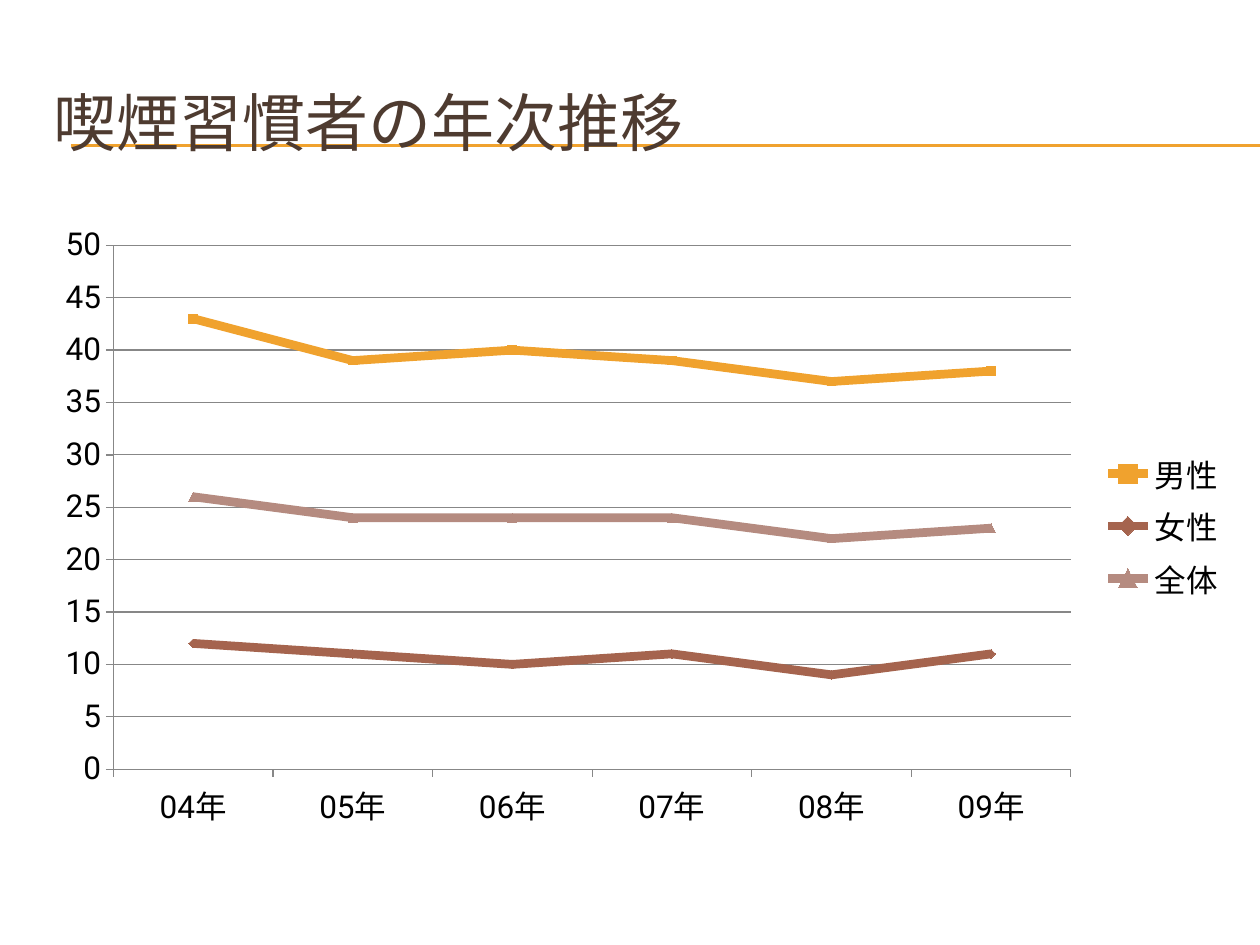
from lxml import etree
from pptx import Presentation
from pptx.chart import data as cd
from pptx.dml.color import RGBColor
from pptx.enum import chart as ch, shapes, text
from pptx.oxml import ns
from pptx.util import Inches, Pt

FONT = "Roboto"
HUES = {"title": "4E3B30", "rule": "F0A22E", "text": "000000", "grid": "878787",
        "men": "F0A22E", "women": "A5644E", "all": "B58B80"}
YEARS = ["04年", "05年", "06年", "07年", "08年", "09年"]
MARKS = ch.XL_MARKER_STYLE
SERIES = [
    ("男性", [43, 39, 40, 39, 37, 38], "men", MARKS.SQUARE),
    ("女性", [12, 11, 10, 11, 9, 11], "women", MARKS.DIAMOND),
    ("全体", [26, 24, 24, 24, 22, 23], "all", MARKS.TRIANGLE),
]


def hue(name):
    return RGBColor.from_string(HUES[name])


def style_font(font, size, name):
    font.size = Pt(size)
    font.name = FONT
    font.color.rgb = hue(name)


def style_line(line, name, width):
    line.color.rgb = hue(name)
    line.width = Pt(width)


def add_rules(slide, left, right, tops):
    for top in tops:
        rule = slide.shapes.add_connector(
            shapes.MSO_CONNECTOR.STRAIGHT,
            Inches(left), Inches(top), Inches(right), Inches(top))
        style_line(rule.line, "rule", 0.75)
        etree.SubElement(rule._element.spPr, ns.qn("a:effectLst"))


def add_title(slide, box):
    frame = slide.shapes.add_textbox(*map(Inches, box)).text_frame
    frame.word_wrap = True
    frame.vertical_anchor = text.MSO_ANCHOR.MIDDLE
    frame.text = "喫煙習慣者の年次推移"
    style_font(frame.paragraphs[0].runs[0].font, 36, "title")


def place_plot(chart, box):
    area = chart._chartSpace.chart.plotArea
    for old in area.findall(ns.qn("c:layout")):
        area.remove(old)
    layout = etree.Element(ns.qn("c:layout"))
    area.insert(0, layout)
    manual = etree.SubElement(layout, ns.qn("c:manualLayout"))
    parts = [("layoutTarget", "inner"), ("xMode", "edge"), ("yMode", "edge")]
    for tag, val in parts + list(zip("xywh", box)):
        etree.SubElement(manual, ns.qn("c:" + tag)).set("val", str(val))


def add_trend(slide, box):
    data = cd.CategoryChartData()
    data.categories = YEARS
    for name, vals, _, _ in SERIES:
        data.add_series(name, vals)
    chart = slide.shapes.add_chart(
        ch.XL_CHART_TYPE.LINE_MARKERS, *map(Inches, box), data).chart
    style_font(chart.font, 18, "text")
    chart.has_title = False
    chart.has_legend = True
    chart.legend.position = ch.XL_LEGEND_POSITION.RIGHT
    chart.legend.include_in_layout = False
    chart.plots[0].vary_by_categories = False
    for axis in (chart.category_axis, chart.value_axis):
        axis.major_tick_mark = ch.XL_TICK_MARK.OUTSIDE
        axis.minor_tick_mark = ch.XL_TICK_MARK.NONE
        style_line(axis.format.line, "grid", 0.75)
    scale = chart.value_axis
    scale.minimum_scale, scale.maximum_scale, scale.major_unit = 0, 50, 5
    scale.has_major_gridlines = True
    style_line(scale.major_gridlines.format.line, "grid", 0.75)
    for line, (_, _, name, mark) in zip(chart.plots[0].series, SERIES):
        line.smooth = False
        style_line(line.format.line, name, 5)
        line.marker.style = mark
        line.marker.size = 5
        line.marker.format.fill.solid()
        line.marker.format.fill.fore_color.rgb = hue(name)
        style_line(line.marker.format.line, name, 0.75)
    place_plot(chart, (0.06, 0.05, 0.8, 0.84))


def main():
    deck = Presentation()
    deck.slide_width, deck.slide_height = Inches(10), Inches(7.5)
    slide = deck.slides.add_slide(deck.slide_layouts[6])
    add_rules(slide, 0.56, 10, (1.15, 1.16))
    add_title(slide, (0.33, 0.5, 9.5, 0.92))
    add_trend(slide, (0.33, 1.7, 9.5, 4.95))
    deck.save("out.pptx")


if __name__ == "__main__":
    main()
